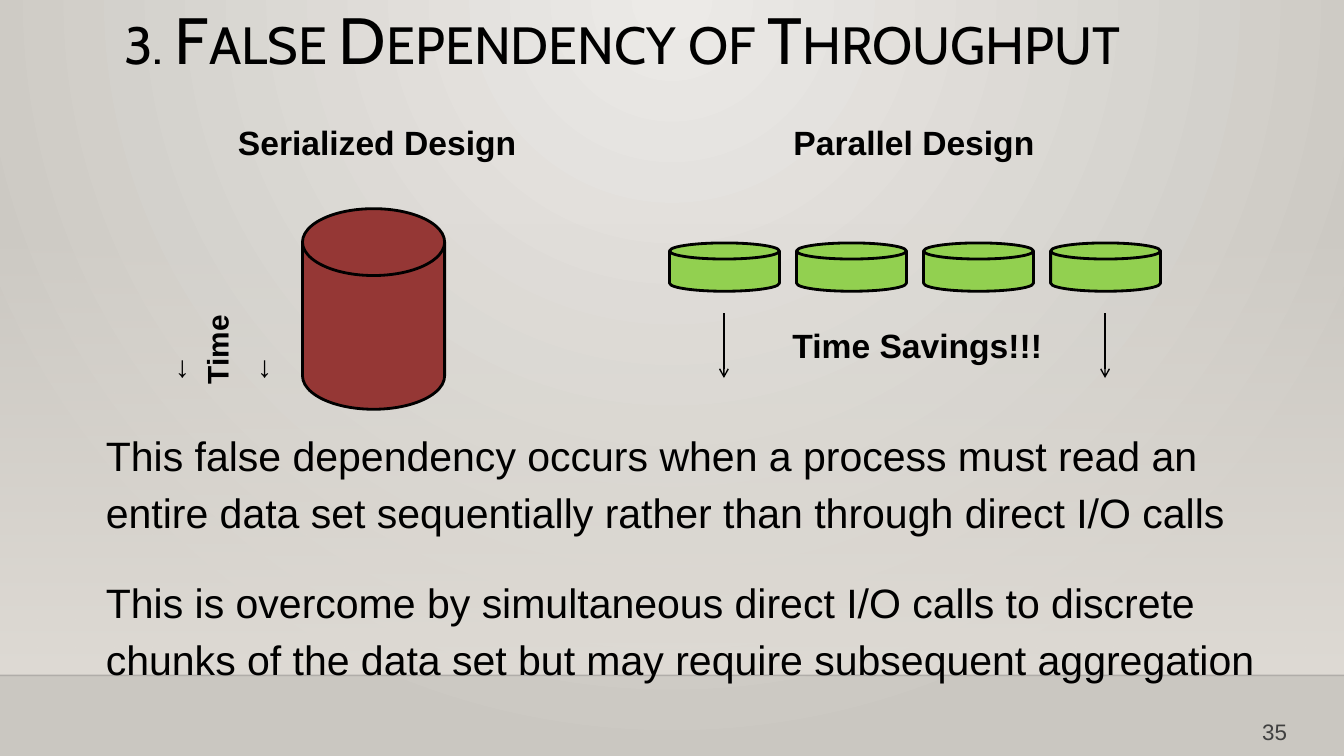
from lxml import etree
from pptx import Presentation
from pptx import util as u
from pptx.dml import color
from pptx.enum import shapes, text
from pptx.oxml import ns

COLORS = {
    "ink": "000000",
    "number": "404040",
    "serial": "953735",
    "parallel": "92D050",
    "center": "ECEAE7",
    "edge": "CAC7C1",
    "wall": "DFDBD5",
    "floor": "000001",
}


def add_child(parent, tag, **attrs):
    child = etree.SubElement(parent, ns.qn(tag))
    for name, value in attrs.items():
        child.set(name, str(value))
    return child


class SlideBuilder:
    font = "Arial"

    def __init__(self, prs):
        self.s = prs.slides.add_slide(prs.slide_layouts[5])

    def rgb(self, name):
        return color.RGBColor.from_string(COLORS[name])

    def gradient(self, fill, root, stops):
        """Set (position, colour, alpha) stops; return the gradient element."""
        fill.gradient()
        grad = root.find(".//" + ns.qn("a:gradFill"))
        for child in list(grad):
            grad.remove(child)
        stop_list = add_child(grad, "a:gsLst")
        for pos, name, alpha in stops:
            gs = add_child(stop_list, "a:gs", pos=pos * 1000)
            clr = add_child(gs, "a:srgbClr", val=COLORS[name])
            if alpha < 100:
                add_child(clr, "a:alpha", val=alpha * 1000)
        return grad

    def background(self):
        grad = self.gradient(self.s.background.fill, self.s._element,
                             [(0, "center", 100), (100, "edge", 100)])
        circle = add_child(grad, "a:path", path="circle")
        add_child(circle, "a:fillToRect", l=43000, t=0, r=43000, b=100000)

    def shape(self, kind, x, y, w, h):
        sp = self.s.shapes.add_shape(kind, *map(u.Inches, (x, y, w, h)))
        sp.shadow.inherit = False
        return sp

    def wall(self, x, y, w, h):
        sp = self.shape(shapes.MSO_SHAPE.RECTANGLE, x, y, w, h)
        grad = self.gradient(sp.fill, sp._element,
                             [(0, "wall", 0), (100, "wall", 100)])
        add_child(grad, "a:lin", ang=5400000, scaled=0)
        sp.line.fill.background()

    def disk(self, x, y, w, h, fill):
        sp = self.shape(shapes.MSO_SHAPE.FLOWCHART_MAGNETIC_DISK, x, y, w, h)
        sp.fill.solid()
        sp.fill.fore_color.rgb = self.rgb(fill)
        sp.line.color.rgb = self.rgb("ink")
        sp.line.width = u.Pt(2)

    def line(self, x1, y1, x2, y2, name="ink", alpha=100, arrow=False):
        cx = self.s.shapes.add_connector(
            shapes.MSO_CONNECTOR.STRAIGHT, *map(u.Inches, (x1, y1, x2, y2)))
        cx.line.color.rgb = self.rgb(name)
        cx.line.width = u.Pt(1)
        spPr = cx._element.spPr
        if alpha < 100:
            add_child(spPr.find(".//" + ns.qn("a:srgbClr")), "a:alpha",
                      val=alpha * 1000)
        if arrow:
            add_child(cx.line._get_or_add_ln(), "a:tailEnd", type="arrow")
        add_child(spPr, "a:effectLst")

    def style(self, p, size, name="ink", font=None, bold=False):
        for r in p.runs:
            r.font.name = font or self.font
            r.font.size = u.Pt(size)
            r.font.bold = bold
            r.font.color.rgb = self.rgb(name)

    def title(self, words, x, y, w, h):
        sp = self.s.shapes.title
        sp.left, sp.top, sp.width, sp.height = map(u.Inches, (x, y, w, h))
        tf = sp.text_frame
        tf.text = words
        tf.vertical_anchor = text.MSO_ANCHOR.MIDDLE
        p = tf.paragraphs[0]
        p.alignment = text.PP_ALIGN.LEFT
        p.line_spacing = 0.9
        self.style(p, 46.7, font="Cabin")
        p.runs[0].font._element.set("cap", "small")

    def text(self, paragraphs, x, y, w, h, size, name="ink", bold=False,
             wrap=True, inset=(0.13, 0.07), spacing=1.15,
             align=text.PP_ALIGN.LEFT, rotation=0):
        sp = self.s.shapes.add_textbox(*map(u.Inches, (x, y, w, h)))
        sp.rotation = rotation
        tf = sp.text_frame
        tf.word_wrap = wrap
        tf.margin_left = tf.margin_right = u.Inches(inset[0])
        tf.margin_top = tf.margin_bottom = u.Inches(inset[1])
        for i, words in enumerate(paragraphs):
            p = tf.paragraphs[0] if i == 0 else tf.add_paragraph()
            p.text = words
            p.alignment = align
            p.line_spacing = spacing
            if i:
                p.space_before = u.Pt(12)
            if i < len(paragraphs) - 1:
                p.space_after = u.Pt(12)
            self.style(p, size, name, bold=bold)

    def label(self, words, x, y, w, h, size=24, **options):
        self.text([words], x, y, w, h, size, bold=True,
                  align=text.PP_ALIGN.JUSTIFY, **options)


def main():
    prs = Presentation()
    prs.slide_width, prs.slide_height = u.Inches(13.33), u.Inches(7.5)
    b = SlideBuilder(prs)

    # Backdrop, page number and title
    b.background()
    b.wall(0, 2.21, 13.33, 4.49)
    b.line(0, 6.7, 13.33, 6.7, "floor", alpha=20)
    b.text(["35"], 12.42, 7.08, 0.48, 0.37, 16, "number", wrap=False,
           inset=(0.1, 0.05), spacing=1.0)
    b.title("3. False Dependency of Throughput", 1.13, 0, 11.09, 0.86)

    # Serialized design
    b.label("Serialized Design", 2.23, 1.08, 3.19, 0.54)
    b.label("← Time ←", 1.17, 3.13, 1.08, 0.54, 21.3, wrap=False, rotation=270)
    b.disk(3, 2.07, 1.41, 1.99, "serial")

    # Parallel design
    b.label("Parallel Design", 7.74, 1.08, 2.7, 0.54)
    for i in range(4):
        b.disk(6.64 + 1.26 * i, 2.41, 1.09, 0.48, "parallel")
    for x in (7.18, 10.96):
        b.line(x, 3.11, x, 3.75, arrow=True)
    b.label("Time Savings!!!", 7.86, 3.16, 2.63, 0.64, wrap=False, inset=(0, 0))

    # Explanation
    b.text(["This false dependency occurs when a process must read an entire "
            "data set sequentially rather than through direct I/O calls",
            "This is overcome by simultaneous direct I/O calls to discrete "
            "chunks of the data set but may require subsequent aggregation"],
           0.92, 4.13, 11.85, 1.57, 29.3)

    prs.save("out.pptx")


if __name__ == "__main__":
    main()
